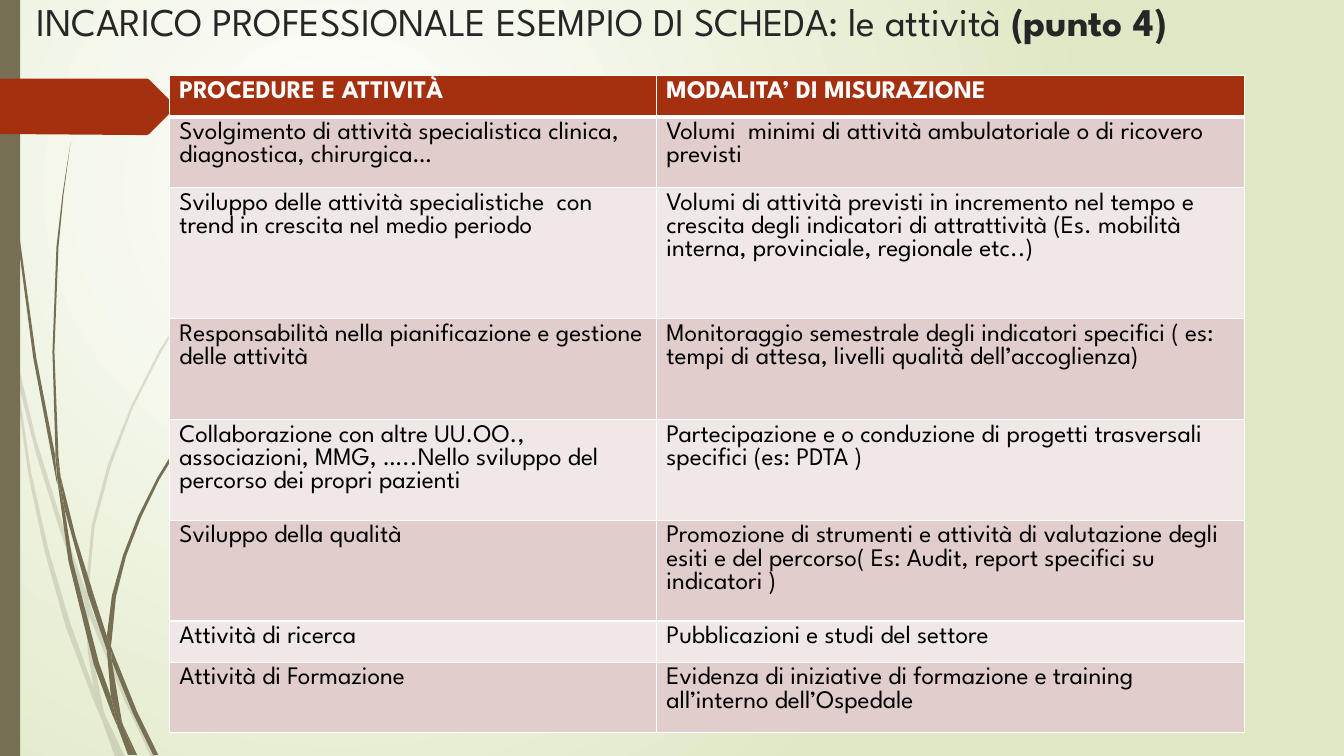
from lxml.etree import SubElement
from pptx import Presentation
from pptx.dml.color import RGBColor
from pptx.enum.shapes import MSO_SHAPE
from pptx.enum.text import MSO_ANCHOR, MSO_AUTO_SIZE, PP_ALIGN
from pptx.oxml.ns import qn
from pptx.util import Inches, Pt

FONT = "League Spartan"
OLIVE, RUST, WHITE = "766F54", "A53010", "FFFFFF"


def paint(fill, colour):
    fill.solid()
    fill.fore_color.rgb = RGBColor.from_string(colour)


def draw(shapes, points, colour):
    """Add a closed, filled outline through points given in inches."""
    spots = [(Inches(x), Inches(y)) for x, y in points]
    pen = shapes.build_freeform(*spots[0], scale=1.0)
    pen.add_line_segments(spots[1:], close=True)
    shape = pen.convert_to_shape()
    shape.shadow.inherit = False
    shape.line.fill.background()
    paint(shape.fill, colour)
    return shape


prs = Presentation()
prs.slide_width, prs.slide_height = Inches(13.33), Inches(7.5)
slide = prs.slides.add_slide(prs.slide_layouts[5])

# Background: round gradient
back = slide.background.fill
back.gradient()
for stop, colour, place in zip(back.gradient_stops, (WHITE, "DFE8C4"), (0, 1)):
    stop.color.rgb = RGBColor.from_string(colour)
    stop.position = place
grad = slide.background._cSld.find(".//" + qn("a:gradFill"))
grad.remove(grad.find(qn("a:lin")))
circle = SubElement(grad, qn("a:path"), path="circle")
SubElement(circle, qn("a:fillToRect"), l="50000", t="50000", r="100000", b="100000")

# Grass: blade outlines in inches, pale behind dark
pale = [
    [(0.11, 3.5), (0.09, 3.22), (0, 2.82), (0, 2.99), (0.1, 3.44)],
    [(0.58, 5.22), (0.84, 5.99), (0.85, 5.86), (0.62, 5.2), (0.36, 4.37), (0.14, 3.45),
     (0.17, 3.76), (0.36, 4.51)],
    [(0.92, 6.07), (0.88, 5.96), (0.88, 6.1), (1.23, 6.94), (1.5, 7.51), (1.55, 7.51),
     (1.27, 6.92)],
    [(1.19, 7.51), (1.24, 7.51), (1.05, 7.11)],
    [(0.93, 6.83), (0.7, 6.19), (0.48, 5.45), (0.31, 4.69), (0.17, 3.76), (0.11, 3.5),
     (0.28, 4.7), (0.44, 5.46), (0.65, 6.21), (0.92, 6.93), (1.01, 7.14), (0.99, 7.07)],
    [(0.84, 5.99), (0.87, 6.46), (0.93, 6.83), (0.96, 6.92), (1.05, 7.11), (1.03, 7.06),
     (0.91, 6.46), (0.88, 6.1), (0.88, 6.08)],
    [(0.88, 5.84), (0.94, 5.22), (1.1, 4.62), (1.32, 4.04), (1.6, 3.49), (1.93, 2.96),
     (2.29, 2.45), (2.68, 1.98), (2.9, 1.75), (3.12, 1.54), (3.12, 1.53), (2.89, 1.75),
     (2.68, 1.97), (2.28, 2.44), (1.91, 2.95), (1.58, 3.48), (1.3, 4.03), (1.07, 4.61),
     (0.91, 5.21), (0.85, 5.84), (0.85, 5.86), (0.88, 5.96)],
    [(1.01, 7.14), (1.14, 7.51), (1.19, 7.51)],
    [(0.88, 6.08), (0.88, 6.1), (0.88, 5.96), (0.85, 5.86), (0.84, 5.99)],
    [(0.96, 6.92), (0.93, 6.83), (0.99, 7.07), (1.01, 7.14), (1.19, 7.51), (1.05, 7.11)],
]
dark = [
    [(0.07, 1.1), (0.17, 2.33), (0.33, 3.55), (0.56, 4.77), (0.57, 4.81), (0.55, 4.57),
     (0.55, 4.53), (0.36, 3.55), (0.19, 2.32), (0.08, 1.09), (0.05, 0.48), (0.04, 0),
     (0.03, 0), (0.04, 0.48)],
    [(0.88, 5.92), (1.06, 6.45), (1.06, 6.33), (1.06, 6.31), (0.93, 5.9), (0.75, 5.32),
     (0.6, 4.72), (0.64, 5.05)],
    [(1.13, 6.49), (1.1, 6.41), (1.11, 6.56), (1.32, 7.08), (1.52, 7.49), (1.57, 7.49),
     (1.36, 7.06)],
    [(1.1, 6.91), (0.98, 6.57), (0.72, 5.56), (0.64, 5.05), (0.57, 4.77), (0.68, 5.57),
     (0.93, 6.59), (1.11, 7.08), (1.17, 7.22), (1.16, 7.17)],
    [(0.6, 4.72), (0.58, 4.53), (0.54, 3.49), (0.58, 2.45), (0.63, 1.93), (0.7, 1.41),
     (0.62, 1.93), (0.56, 2.45), (0.52, 3.49), (0.55, 4.49)],
    [(1.33, 7.49), (1.36, 7.49), (1.22, 7.19)],
    [(0.57, 4.77), (0.64, 5.05), (0.6, 4.72), (0.55, 4.49), (0.55, 4.53)],
    [(1.11, 6.33), (1.15, 5.92), (1.25, 5.52), (1.4, 5.13), (1.58, 4.76), (1.8, 4.4),
     (2.05, 4.06), (2.31, 3.74), (2.45, 3.59), (2.61, 3.44), (2.6, 3.44), (2.45, 3.58),
     (2.31, 3.73), (2.04, 4.05), (1.78, 4.38), (1.56, 4.74), (1.37, 5.12), (1.22, 5.51),
     (1.11, 5.91), (1.06, 6.31), (1.1, 6.41)],
    [(1.17, 7.22), (1.27, 7.49), (1.31, 7.49)],
    [(1.06, 6.45), (1.1, 6.91), (1.16, 7.06), (1.22, 7.19), (1.21, 7.16), (1.11, 6.56),
     (1.09, 6.51)],
    [(1.06, 6.45), (1.09, 6.51), (1.11, 6.56), (1.1, 6.41), (1.06, 6.31), (1.06, 6.33)],
    [(1.16, 7.06), (1.1, 6.91), (1.16, 7.17), (1.17, 7.22), (1.3, 7.49), (1.33, 7.49),
     (1.22, 7.19)],
]
for blades, alpha in ((pale, 20), (dark, 100)):
    tuft = slide.shapes.add_group_shape()
    for points in blades:
        blade = draw(tuft.shapes, points, OLIVE)
        if alpha < 100:
            tint = blade._element.spPr.find(".//" + qn("a:srgbClr"))
            SubElement(tint, qn("a:alpha"), val=str(alpha * 1000))

bar = slide.shapes.add_shape(MSO_SHAPE.RECTANGLE, 0, 0, Inches(0.2), Inches(7.5))
bar.shadow.inherit = False
bar.line.fill.background()
paint(bar.fill, OLIVE)
draw(slide.shapes, [(0, 0.78), (1.46, 0.78), (1.48, 0.79), (1.73, 1.04), (1.74, 1.06),
                    (1.73, 1.08), (1.48, 1.33), (1.46, 1.34), (1.36, 1.34), (0, 1.33)], RUST)

# Title
title = slide.shapes.title
title.left, title.top = Inches(0.27), Inches(-0.09)
title.width, title.height = Inches(13.01), Inches(0.66)
frame = title.text_frame
frame.auto_size = MSO_AUTO_SIZE.NONE
frame.vertical_anchor = MSO_ANCHOR.MIDDLE
frame.margin_left, frame.margin_bottom = Inches(0.09), Inches(0.12)
line = frame.paragraphs[0]
line.alignment = PP_ALIGN.LEFT
for text, bold in (("INCARICO PROFESSIONALE ESEMPIO DI SCHEDA: le attività ", False),
                   ("(punto 4)", True)):
    run = line.add_run()
    run.text = text
    run.font.name, run.font.size, run.font.bold = FONT, Pt(28), bold
    paint(run.font.fill, "262626")

# Table: row height, activity, measure
rows = [
    (0.41, "PROCEDURE E ATTIVITÀ", "MODALITA’ DI MISURAZIONE"),
    (0.7, "Svolgimento di attività specialistica clinica, diagnostica, chirurgica…",
     "Volumi  minimi di attività ambulatoriale o di ricovero previsti"),
    (1.3, "Sviluppo delle attività specialistiche  con trend in crescita nel medio periodo",
     "Volumi di attività previsti in incremento nel tempo e crescita degli indicatori di "
     "attrattività (Es. mobilità interna, provinciale, regionale etc..)"),
    (1, "Responsabilità nella pianificazione e gestione delle attività",
     "Monitoraggio semestrale degli indicatori specifici ( es: tempi di attesa, livelli "
     "qualità dell’accoglienza)"),
    (1, "Collaborazione con altre UU.OO., associazioni, MMG, …..Nello sviluppo del percorso "
     "dei propri pazienti",
     "Partecipazione e o conduzione di progetti trasversali specifici (es: PDTA )"),
    (1, "Sviluppo della qualità",
     "Promozione di strumenti e attività di valutazione degli esiti e del percorso( Es: "
     "Audit, report specifici su indicatori )"),
    (0.41, "Attività di ricerca", "Pubblicazioni e studi del settore"),
    (0.7, "Attività di Formazione",
     "Evidenza di iniziative di formazione e training all’interno dell’Ospedale"),
]
table = slide.shapes.add_table(len(rows), 2, Inches(1.68), Inches(0.75),
                               Inches(10.66), Inches(6.51)).table
for column, width in zip(table.columns, (4.83, 5.83)):
    column.width = Inches(width)
for i, (height, *texts) in enumerate(rows):
    table.rows[i].height = Inches(height)
    head = i == 0
    band = RUST if head else "E1CDCC" if i % 2 else "F0E8E7"
    for cell, text in zip(table.rows[i].cells, texts):
        cell.text_frame.text = text
        font = cell.text_frame.paragraphs[0].runs[0].font
        font.name, font.size, font.bold = FONT, Pt(18), head
        paint(font.fill, WHITE if head else "000000")
        props = cell._tc.get_or_add_tcPr()
        for side in "LRTB":
            thick = (i, side) in ((0, "B"), (1, "T"))
            edge = SubElement(props, qn("a:ln" + side), w=str(Pt(3 if thick else 1)))
            ink = SubElement(edge, qn("a:solidFill"))
            SubElement(ink, qn("a:srgbClr"), val=WHITE)
        paint(cell.fill, band)

prs.save("out.pptx")
